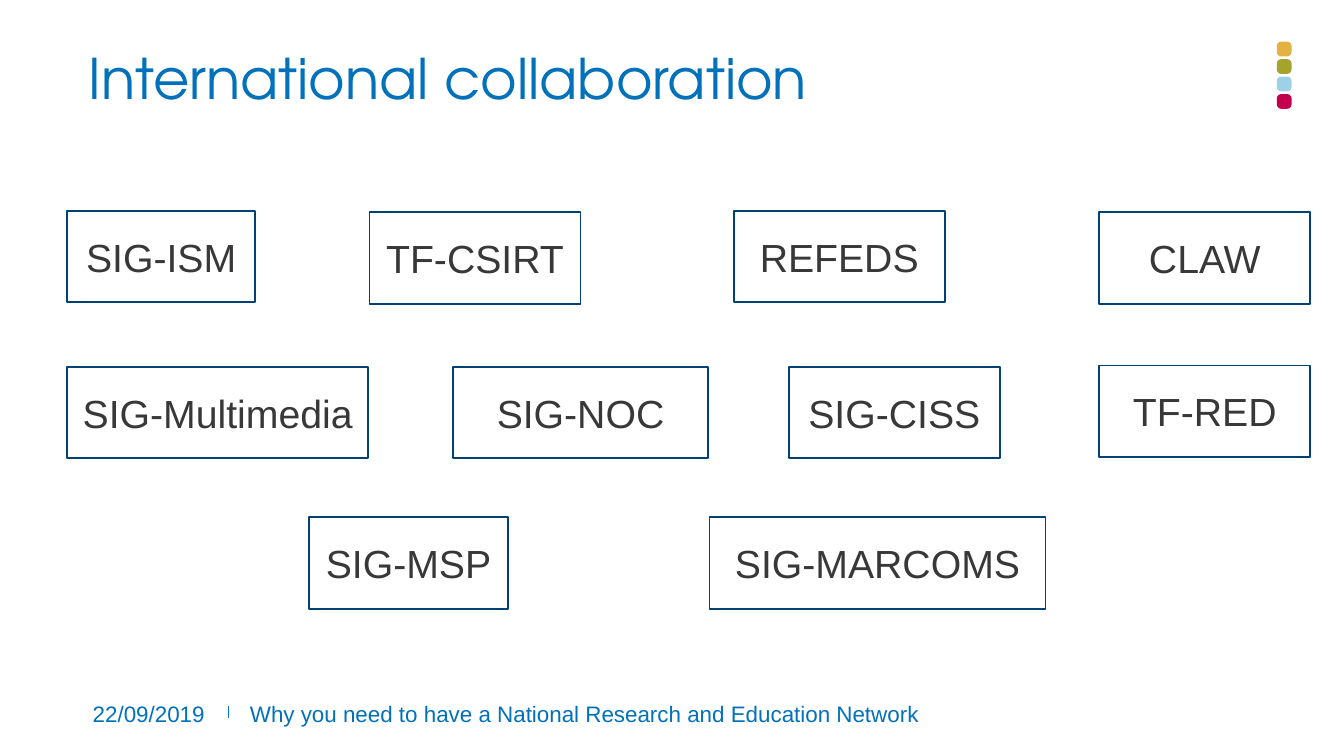
from pptx import Presentation
from pptx.dml.color import RGBColor
from pptx.enum.shapes import MSO_CONNECTOR, MSO_SHAPE
from pptx.enum.text import MSO_ANCHOR, PP_ALIGN
from pptx.oxml.ns import qn
from pptx.util import Inches, Pt
from lxml import etree

RECT, ROUNDED = MSO_SHAPE.RECTANGLE, MSO_SHAPE.ROUNDED_RECTANGLE
STRAIGHT = MSO_CONNECTOR.STRAIGHT
TOP, MIDDLE = MSO_ANCHOR.TOP, MSO_ANCHOR.MIDDLE
LEFT, CENTER = PP_ALIGN.LEFT, PP_ALIGN.CENTER

BLUE, NAVY, GREY = "0071BA", "004273", "383838"
DOTS = ["E3B240", "A5A32E", "9DD1E7", "C3004D"]
TITLE_FONT = {"name": "TeX Gyre Adventor", "size": Pt(30), "bold": False}
FOOTER_FONT = {"name": "Arial", "size": Pt(12)}
GROUP_FONT = {"name": "Arial", "size": Pt(21)}
NO_MARGINS = {f"margin_{side}": 0 for side in ("left", "top", "right", "bottom")}
BOX_HEIGHT = 0.68
GROUPS = [
    ("SIG-ISM", 0.5, 1.57, 1.4),
    ("TF-CSIRT", 2.75, 1.58, 1.57),
    ("REFEDS", 5.46, 1.57, 1.57),
    ("CLAW", 8.18, 1.58, 1.57),
    ("SIG-Multimedia", 0.5, 2.73, 2.24),
    ("SIG-NOC", 3.37, 2.73, 1.9),
    ("SIG-CISS", 5.87, 2.73, 1.57),
    ("TF-RED", 8.18, 2.72, 1.57),
    ("SIG-MSP", 2.3, 3.85, 1.48),
    ("SIG-MARCOMS", 5.28, 3.85, 2.5),
]


def rgb(color):
    """Return the colour for a hex string."""
    return RGBColor.from_string(color)


def set_attrs(obj, values):
    """Set each attribute of an object from a dict."""
    for name, value in values.items():
        setattr(obj, name, value)


def write(sp, text, font, color, align=LEFT, **frame):
    """Write one formatted paragraph into a shape."""
    tf = sp.text_frame
    set_attrs(tf, {"word_wrap": True, **frame})
    p = tf.paragraphs[0]
    p.alignment = align
    r = p.add_run()
    r.text = text
    set_attrs(r.font, font)
    r.font.color.rgb = rgb(color)
    return p


def add_title(s, text):
    """Place and format the title placeholder."""
    sp = s.shapes.title
    set_attrs(sp, {"left": Inches(0.66), "top": Inches(0.38),
                   "width": Inches(8.62), "height": Inches(0.77)})
    p = write(sp, text, TITLE_FONT, BLUE, vertical_anchor=TOP, **NO_MARGINS)
    p.line_spacing = 0.9


def add_dots(s):
    """Stack the coloured dots in the top right corner."""
    for i, color in enumerate(DOTS):
        sp = s.shapes.add_shape(ROUNDED, Inches(9.5), Inches(0.31 + 0.13 * i),
                                Inches(0.11), Inches(0.11))
        sp.adjustments[0] = 0.3
        sp.rotation = 90
        sp.shadow.inherit = False
        sp.fill.solid()
        sp.fill.fore_color.rgb = rgb(color)
        sp.line.fill.background()


def add_group_box(s, name, left, top, width):
    """Add an outlined box naming one working group."""
    sp = s.shapes.add_shape(RECT, Inches(left), Inches(top),
                            Inches(width), Inches(BOX_HEIGHT))
    sp.shadow.inherit = False
    sp.fill.background()
    sp.line.color.rgb = rgb(NAVY)
    sp.line.width = Pt(1)
    write(sp, name, GROUP_FONT, GREY, CENTER, vertical_anchor=MIDDLE)


def add_footer_text(s, text, left, width, height):
    """Add one text box on the footer line."""
    sp = s.shapes.add_textbox(Inches(left), Inches(5.21), Inches(width), Inches(height))
    write(sp, text, FOOTER_FONT, BLUE, **NO_MARGINS)


def add_divider(s):
    """Draw the short line between date and footer."""
    line = s.shapes.add_connector(STRAIGHT, Inches(1.7), Inches(5.25),
                                  Inches(1.7), Inches(5.34))
    line.line.color.rgb = rgb(BLUE)
    line.line.width = Pt(1)
    etree.SubElement(line._element.spPr, qn("a:effectLst"))


def main():
    """Build and save the slide."""
    prs = Presentation()
    prs.slide_width, prs.slide_height = Inches(10), Inches(10 * 9 / 16)
    s = prs.slides.add_slide(prs.slide_layouts[5])
    add_title(s, "International collaboration")
    add_dots(s)
    for group in GROUPS:
        add_group_box(s, *group)
    add_footer_text(s, "22/09/2019", 0.69, 0.94, 0.21)
    add_divider(s)
    add_footer_text(s, "Why you need to have a National Research and Education Network",
                    1.86, 5.2, 0.26)
    prs.save("out.pptx")


if __name__ == "__main__":
    main()
